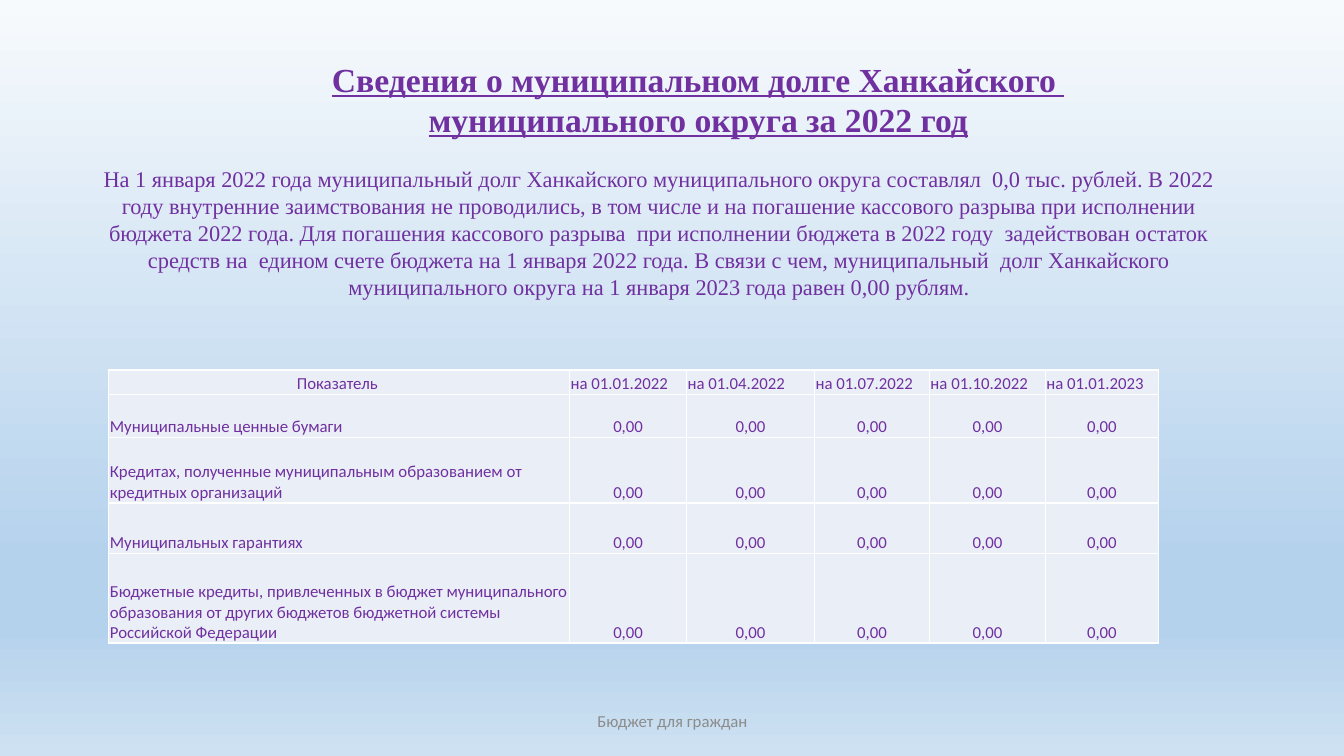
from lxml.etree import SubElement
from pptx import Presentation
from pptx.dml.color import RGBColor
from pptx.enum.text import MSO_ANCHOR, MSO_AUTO_SIZE, PP_ALIGN
from pptx.oxml import parse_xml
from pptx.oxml.ns import nsdecls, qn
from pptx.util import Inches, Pt

COLORS = {"purple": "7030A0", "gray": "8C8C8C", "cell": "EAEFF7", "border": "FFFFFF"}
SKY_STOPS = [(0, "F7FAFD"), (74, "B5D2EC"), (83, "B5D2EC"), (100, "CEE1F2")]

TITLE_FONT = {"name": "Times New Roman", "size": Pt(24), "bold": True, "underline": True}
BODY_FONT = {"name": "Times New Roman", "size": Pt(16)}
SMALL_FONT = {"name": "Calibri", "size": Pt(12), "bold": False}

TITLE = ["Сведения о муниципальном долге Ханкайского ", "муниципального округа за 2022 год"]
SUMMARY = (
    "На 1 января 2022 года муниципальный долг Ханкайского муниципального округа "
    "составлял  0,0 тыс. рублей. В 2022 году внутренние заимствования не проводились, "
    "в том числе и на погашение кассового разрыва при исполнении бюджета 2022 года. "
    "Для погашения кассового разрыва  при исполнении бюджета в 2022 году  задействован "
    "остаток средств на  едином счете бюджета на 1 января 2022 года. В связи с чем, "
    "муниципальный  долг Ханкайского муниципального округа на 1 января 2023 года "
    "равен 0,00 рублям."
)
DATES = ["01.01.2022", "01.04.2022", "01.07.2022", "01.10.2022", "01.01.2023"]
DEBT_TYPES = [
    "Муниципальные ценные бумаги",
    "Кредитах, полученные муниципальным образованием от кредитных организаций",
    "Муниципальных гарантиях",
    "Бюджетные кредиты, привлеченных в бюджет муниципального образования "
    "от других бюджетов бюджетной системы Российской Федерации",
]
COLUMN_WIDTHS = [4.57, 1.16, 1.27, 1.14, 1.15, 1.12]
ROW_HEIGHTS = [0.24, 0.43, 0.65, 0.5, 0.89]


def set_all(target, values):
    for name, value in values.items():
        setattr(target, name, value)


def write(frame, lines, font, color, align=PP_ALIGN.CENTER):
    frame.text = "\n".join(lines)
    for para in frame.paragraphs:
        para.alignment = align
        for span in para.runs:
            set_all(span.font, font)
            span.font.color.rgb = RGBColor.from_string(COLORS[color])


def paint_background(page):
    fill = page.background.fill
    fill.gradient()
    fill.gradient_angle = 270
    stops = page.background._cSld.find(".//" + qn("a:gsLst"))
    for stop in list(stops):
        stops.remove(stop)
    for percent, color in SKY_STOPS:
        stop = SubElement(stops, qn("a:gs"), pos=str(percent * 1000))
        SubElement(stop, qn("a:srgbClr"), val=color)


def place_title(page, left, top, width, height):
    title = page.shapes.title
    set_all(title, {"left": Inches(left), "top": Inches(top),
                    "width": Inches(width), "height": Inches(height)})
    set_all(title.text_frame, {"word_wrap": False, "vertical_anchor": MSO_ANCHOR.TOP,
                               "auto_size": MSO_AUTO_SIZE.SHAPE_TO_FIT_TEXT})
    write(title.text_frame, TITLE, TITLE_FONT, "purple")


def add_text(page, box, text, font, color, anchor):
    frame = page.shapes.add_textbox(*map(Inches, box)).text_frame
    set_all(frame, {"word_wrap": True, "vertical_anchor": anchor})
    write(frame, [text], font, color)


def draw_borders(cell):
    properties = cell._tc.get_or_add_tcPr()
    for position, side in enumerate("LRTB"):
        properties.insert(position, parse_xml(
            f'<a:ln{side} {nsdecls("a")} w="12700"><a:solidFill>'
            f'<a:srgbClr val="{COLORS["border"]}"/></a:solidFill></a:ln{side}>'))


def add_debt_table(page, left, top):
    rows = [["Показатель "] + [f"на {date}" for date in DATES]]
    rows += [[debt] + ["0,00"] * len(DATES) for debt in DEBT_TYPES]
    table = page.shapes.add_table(
        len(rows), len(COLUMN_WIDTHS), Inches(left), Inches(top),
        Inches(sum(COLUMN_WIDTHS)), Inches(sum(ROW_HEIGHTS))).table
    set_all(table, {"first_row": False, "horz_banding": False})
    for column, width in zip(table.columns, COLUMN_WIDTHS):
        column.width = Inches(width)
    for row, height in zip(table.rows, ROW_HEIGHTS):
        row.height = Inches(height)
    for r, texts in enumerate(rows):
        for c, text in enumerate(texts):
            cell = table.cell(r, c)
            set_all(cell, {"margin_left": Inches(0.01), "margin_right": Inches(0.01),
                           "margin_top": Inches(0.01), "margin_bottom": 0,
                           "vertical_anchor": MSO_ANCHOR.BOTTOM})
            cell.fill.solid()
            cell.fill.fore_color.rgb = RGBColor.from_string(COLORS["cell"])
            draw_borders(cell)
            centered = (r == 0) == (c == 0)
            write(cell.text_frame, [text], SMALL_FONT, "purple",
                  PP_ALIGN.CENTER if centered else PP_ALIGN.LEFT)


def main():
    deck = Presentation()
    set_all(deck, {"slide_width": Inches(13.33), "slide_height": Inches(7.5)})
    page = deck.slides.add_slide(deck.slide_layouts.get_by_name("Title Only"))
    paint_background(page)
    place_title(page, 3.15, 0.53, 7.55, 0.91)
    add_text(page, (0.79, 1.59, 11.49, 1.45), SUMMARY, BODY_FONT, "purple", MSO_ANCHOR.TOP)
    add_debt_table(page, 1.08, 3.67)
    add_text(page, (4.42, 6.95, 4.5, 0.4), "Бюджет для граждан", SMALL_FONT, "gray",
             MSO_ANCHOR.MIDDLE)
    deck.save("out.pptx")


if __name__ == "__main__":
    main()
